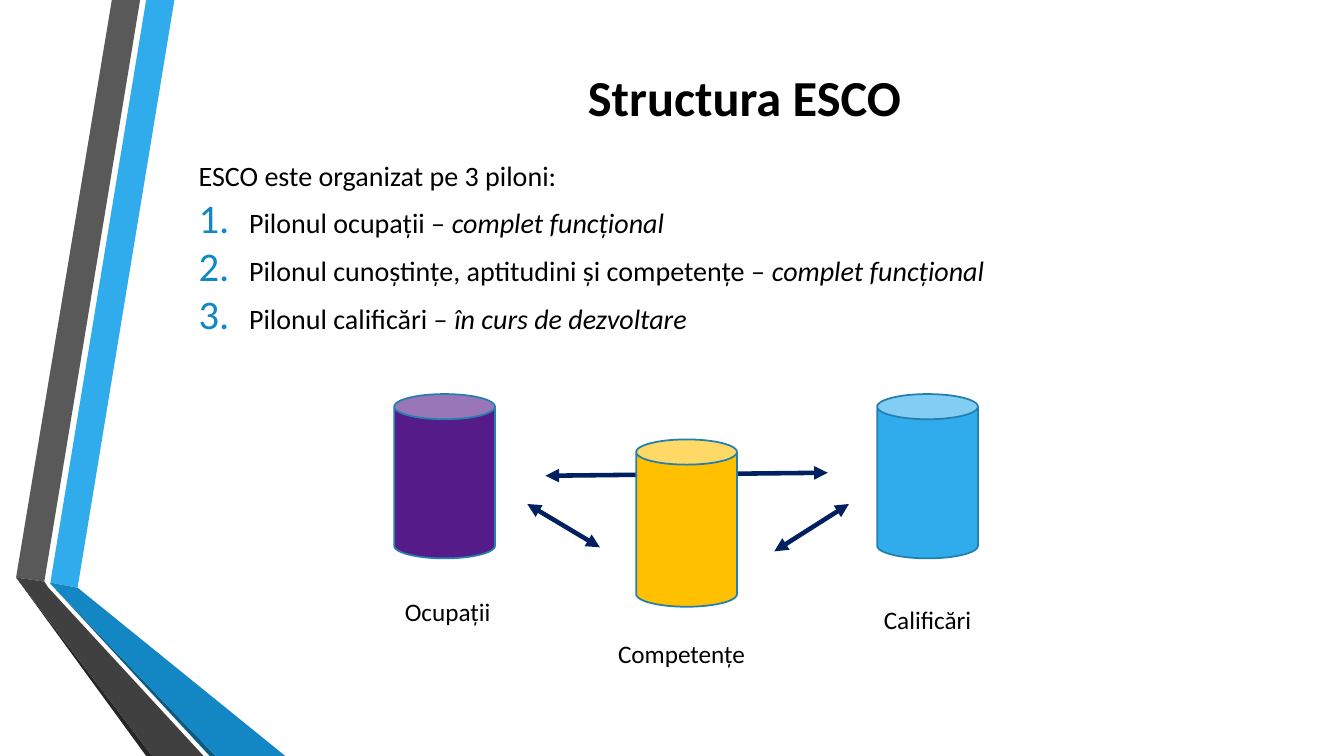
from lxml.etree import SubElement
from pptx import Presentation
from pptx.dml.color import RGBColor
from pptx.enum.shapes import MSO_CONNECTOR as CONNECTOR, MSO_SHAPE as SHAPE
from pptx.enum.text import MSO_ANCHOR as ANCHOR, MSO_AUTO_SIZE as AUTO_SIZE, PP_ALIGN as ALIGN
from pptx.oxml.ns import qn
from pptx.util import Inches, Pt


def color(value):
    return RGBColor.from_string(value)


def add_run(paragraph, text, **formats):
    run = paragraph.add_run()
    run.text = text
    run.font.color.rgb = color("000000")
    for name, value in {"name": "Calibri", **formats}.items():
        setattr(run.font, name, value)


presentation = Presentation()
presentation.slide_width, presentation.slide_height = Inches(13.33), Inches(7.5)
slide = presentation.slides.add_slide(presentation.slide_layouts[1])
shapes = slide.shapes

# Folded ribbons on the left edge
ribbons = [
    ("30ACEC", [(0.5, 5.78), (0.77, 5.83), (1.73, 0), (1.45, 0)]),
    ("595959", [(1.39, 0), (1.11, 0), (0.16, 5.73), (0.44, 5.77)]),
    ("262626", [(0.16, 5.73), (1.45, 7.5), (1.51, 7.5)]),
    ("0C5A82", [(0.5, 5.79), (2.08, 7.5), (2.14, 7.5)]),
    ("1287C3", [(0.5, 5.79), (2.14, 7.5), (2.83, 7.5), (0.77, 5.83), (0.5, 5.78)]),
    ("404040", [(2.02, 7.5), (0.48, 5.83), (0.44, 5.77), (0.16, 5.73), (1.51, 7.5)]),
]
for fill, points in ribbons:
    start, *corners = [(Inches(x), Inches(y)) for x, y in points]
    builder = shapes.build_freeform(*start)
    builder.add_line_segments(corners, close=True)
    ribbon = builder.convert_to_shape()
    ribbon.shadow.inherit = False
    ribbon.fill.solid()
    ribbon.fill.fore_color.rgb = color(fill)
    ribbon.line.fill.background()

# Title
title = shapes.title
title.left, title.top, title.width, title.height = map(Inches, (2.5, 0.32, 9.77, 1.28))
title.text_frame.vertical_anchor = ANCHOR.MIDDLE
title_paragraph = title.text_frame.paragraphs[0]
title_paragraph.alignment = ALIGN.CENTER
add_run(title_paragraph, "Structura ESCO", size=Pt(36), bold=True)

# Introduction and numbered pillars
body = slide.placeholders[1]
body.left, body.top, body.width, body.height = map(Inches, (1.87, 1.52, 10.8, 4.78))
body.text_frame.auto_size = AUTO_SIZE.NONE
body.text_frame.vertical_anchor = ANCHOR.TOP
lines = [
    ("ESCO este organizat pe 3 piloni:", None),
    ("Pilonul ocupații – ", "complet funcțional"),
    ("Pilonul cunoștințe, aptitudini și competențe – ", "complet funcțional"),
    ("Pilonul calificări – ", "în curs de dezvoltare"),
]
for index, (text, status) in enumerate(lines):
    paragraph = body.text_frame.paragraphs[0] if index == 0 else body.text_frame.add_paragraph()
    paragraph.space_before, paragraph.space_after = Pt(4), Pt(6)
    add_run(paragraph, text, size=Pt(20))
    properties = paragraph._p.get_or_add_pPr()
    indent = Inches(0.5) if status else 0
    properties.set("marL", str(indent))
    properties.set("indent", str(-indent))
    if status:
        add_run(paragraph, status, size=Pt(20), italic=True)
        bullet_color = SubElement(properties, qn("a:buClr"))
        SubElement(bullet_color, qn("a:srgbClr"), val="1287C3")
        SubElement(properties, qn("a:buSzPct"), val="145000")
        SubElement(properties, qn("a:buFont"), typeface="+mj-lt")
        SubElement(properties, qn("a:buAutoNum"), type="arabicPeriod")
    else:
        SubElement(properties, qn("a:buNone"))

# Double arrows between the pillars
arrows = [(5.41, 4.72, 8.21, 4.69), (5.23, 5, 5.95, 5.43), (7.68, 5.47, 8.42, 5)]
for ends in arrows:
    arrow = shapes.add_connector(CONNECTOR.STRAIGHT, *map(Inches, ends))
    arrow.line.color.rgb = color("002060")
    arrow.line.width = Pt(3.25)
    outline = arrow.line._get_or_add_ln()
    for end in ("a:headEnd", "a:tailEnd"):
        SubElement(outline, qn(end), type="triangle")
    SubElement(arrow._element.spPr, qn("a:effectLst"))

# Pillars and their labels
pillars = [
    ("Ocupații", "541B89", (3.91, 3.91, 1, 1.63), (3.66, 5.82)),
    ("Competențe", "FFC000", (6.31, 4.36, 1, 1.66), (5.98, 6.23)),
    ("Calificări", "30ACEC", (8.7, 3.91, 1, 1.63), (8.42, 5.9)),
]
for name, fill, box, label_corner in pillars:
    pillar = shapes.add_shape(SHAPE.CAN, *map(Inches, box))
    pillar.shadow.inherit = False
    pillar.fill.solid()
    pillar.fill.fore_color.rgb = color(fill)
    pillar.line.color.rgb = color("247FAF")
    pillar.line.width = Pt(1.25)

    label = shapes.add_textbox(*map(Inches, (*label_corner, 1.56, 0.5)))
    label.text_frame.word_wrap = True
    label.text_frame.vertical_anchor = ANCHOR.MIDDLE
    label_paragraph = label.text_frame.paragraphs[0]
    label_paragraph.alignment = ALIGN.CENTER
    add_run(label_paragraph, name, size=Pt(18))

presentation.save("out.pptx")
